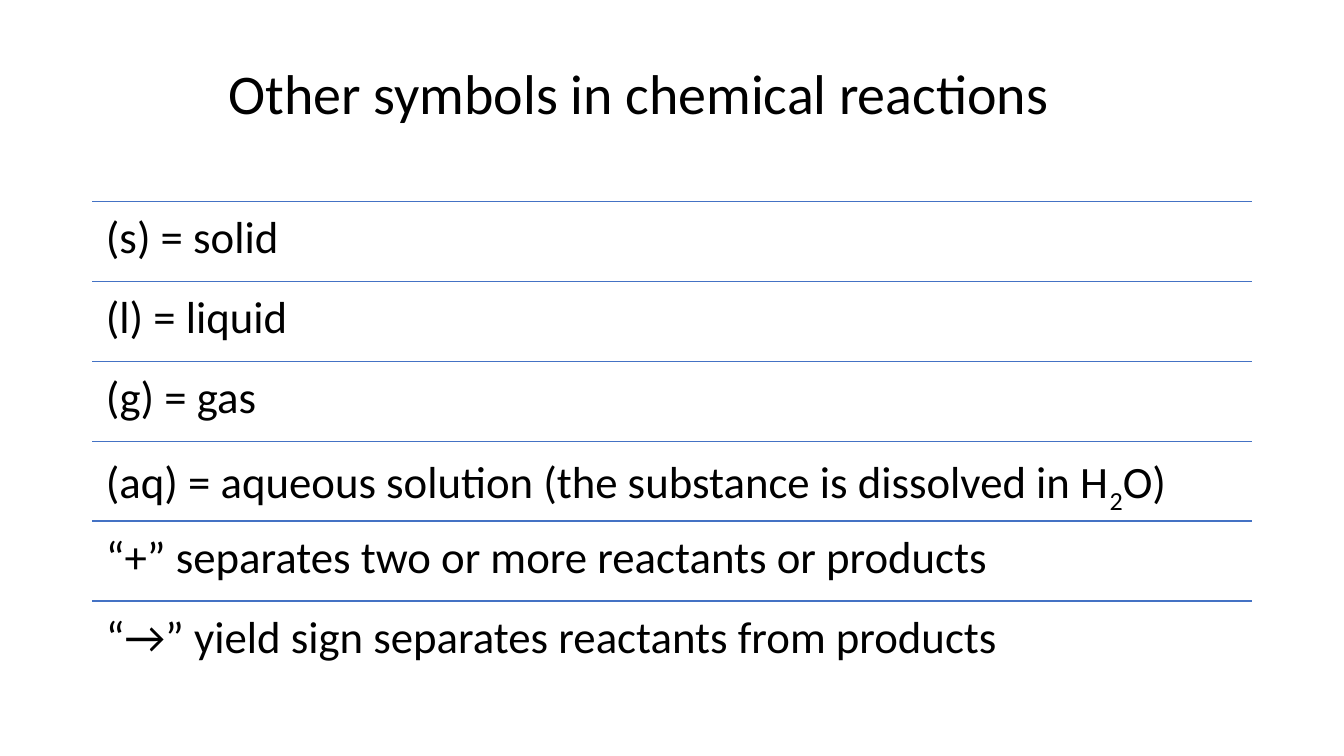
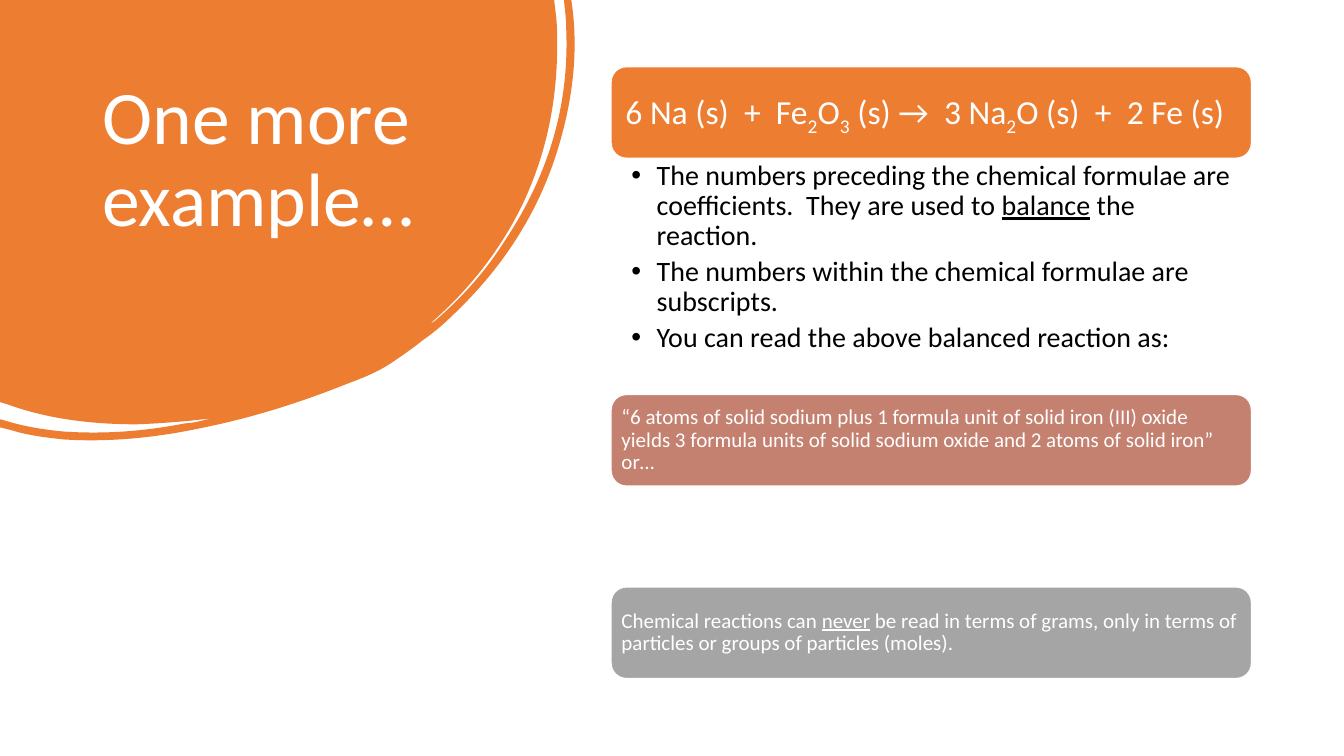
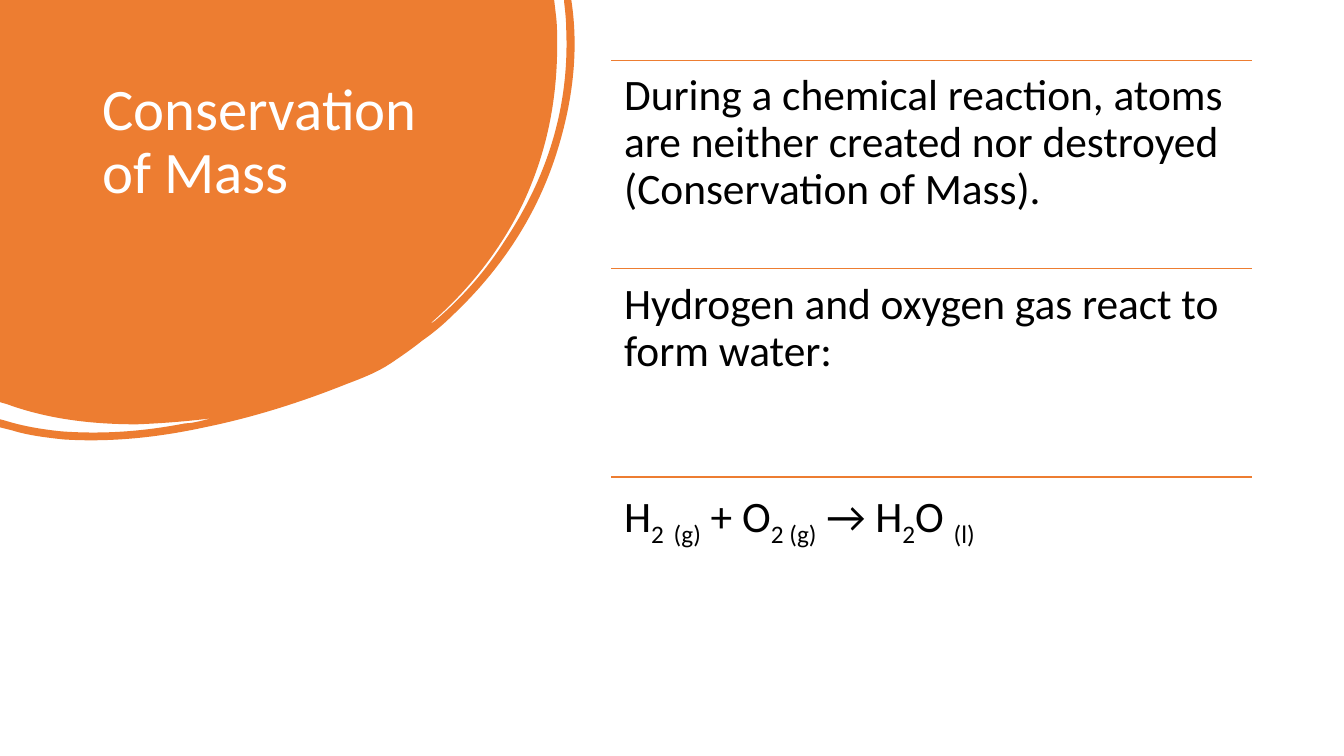
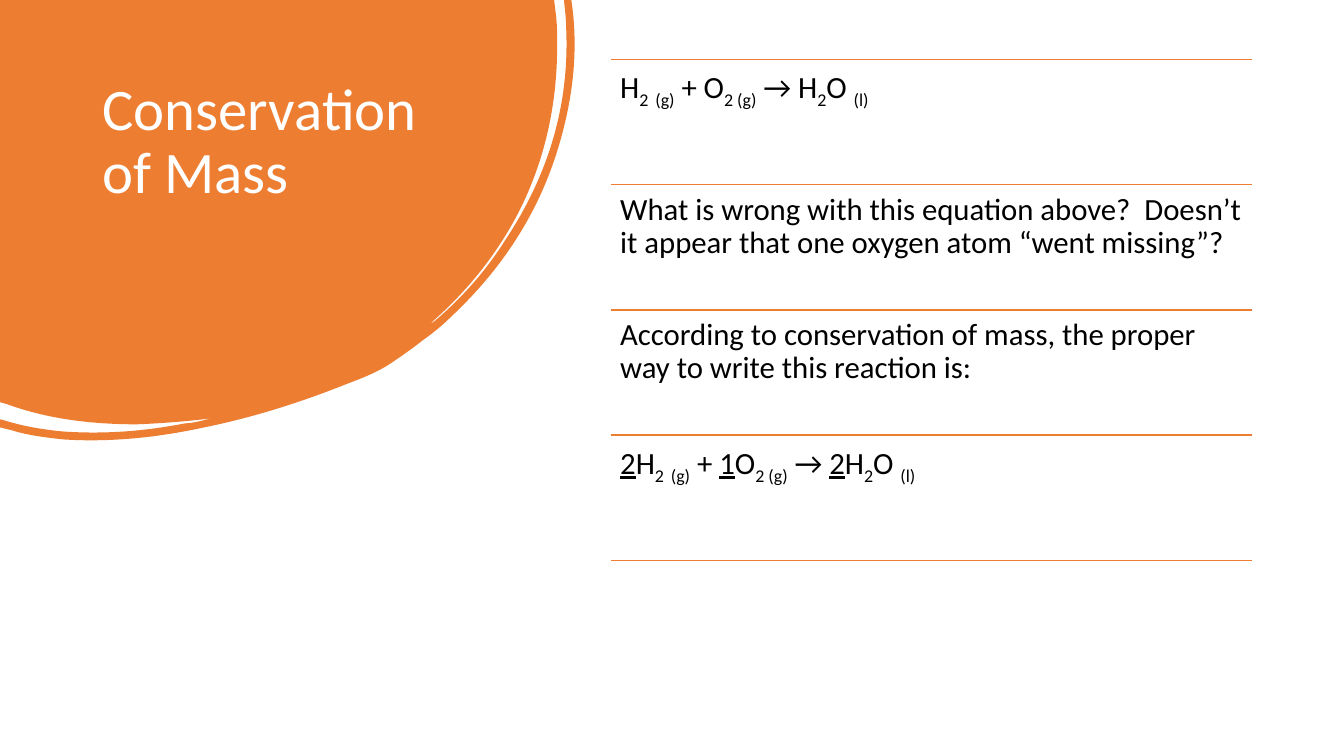
from collections import namedtuple

from lxml import etree
from pptx import Presentation
from pptx import util as u
from pptx.dml.color import RGBColor
from pptx.enum import shapes, text
from pptx.oxml import ns

Box = namedtuple("Box", "left top width height")

FONT = "Calibri"
ORANGE, CLAY, GREY, BLUE = "ED7D31", "C48170", "A5A5A5", "4472C4"
BLACK, WHITE = "000000", "FFFFFF"

SWOOSH_BOX = Box(0, 0, 14.5, 11.1)
SIDE_TITLE_BOX = Box(2.33, 1.87, 8.94, 5.64)
COLUMN_LEFT, COLUMN_WIDTH = 15.4, 16.14

SWOOSH_GRID = (5.71, 4.37)
SWOOSH_OUTLINE = [
    (0, 0), (5.5, 0), (5.52, 0.17),
    (5.53, 0.26, 5.53, 0.36, 5.53, 0.45),
    (5.53, 1.01, 5.42, 1.54, 5.18, 2.04),
    (4.96, 2.49, 4.65, 2.88, 4.27, 3.21),
    (4.29, 3.21, 4.3, 3.19, 4.32, 3.18),
    (4.59, 2.95, 4.82, 2.69, 5.01, 2.39),
    (5.43, 1.76, 5.65, 1.07, 5.62, 0.3),
    (5.62, 0.21, 5.61, 0.12, 5.6, 0.03),
    (5.6, 0), (5.67, 0), (5.68, 0.07),
    (5.74, 0.54, 5.68, 1.02, 5.53, 1.5),
    (5.33, 2.14, 4.97, 2.68, 4.48, 3.14),
    (4.39, 3.23, 4.29, 3.31, 4.19, 3.38),
    (4.09, 3.46, 3.99, 3.53, 3.87, 3.61),
    (3.75, 3.69, 3.6, 3.75, 3.44, 3.81),
    (2.99, 3.99, 2.52, 4.14, 2.03, 4.24),
    (1.57, 4.34, 1.1, 4.39, 0.63, 4.36),
    (0.45, 4.34, 0.28, 4.32, 0.12, 4.27),
    (0, 4.24), (0, 4.16), (0.04, 4.17),
    (0.23, 4.23, 0.42, 4.26, 0.61, 4.28),
    (1.03, 4.31, 1.43, 4.28, 1.84, 4.2),
    (1.89, 4.2, 1.93, 4.19, 1.98, 4.18),
    (2.02, 4.17, 2.06, 4.16, 2.1, 4.15),
    (1.86, 4.18, 1.61, 4.2, 1.36, 4.21),
    (0.92, 4.21, 0.48, 4.16, 0.07, 4.01),
    (0, 3.99),
]

WATER = "H~2~ ~(g)~ + O~2 (g)~ → H~2~O ~(l)~"
BALANCED_WATER = "*2*H~2~ ~(g)~ + *1*O~2 (g)~ → *2*H~2~O ~(l)~"
SYMBOLS = [
    "(s) = solid",
    "(l) = liquid",
    "(g) = gas",
    "(aq) = aqueous solution (the substance is dissolved in H~2~O)",
    "“+” separates two or more reactants or products",
    "“→” yield sign separates reactants from products",
]
REACTION = "6 Na (s)  +  Fe~2~O~3~ (s) →  3 Na~2~O (s)  +  2 Fe (s)"
READING_NOTES = [
    "The numbers preceding the chemical formulae are coefficients.  "
    "They are used to *balance* the reaction.",
    "The numbers within the chemical formulae are subscripts.",
    "You can read the above balanced reaction as:",
]
READING = (
    "“6 atoms of solid sodium plus 1 formula unit of solid iron (III) oxide "
    "yields 3 formula units of solid sodium oxide and 2 atoms of solid iron” or…"
)
WARNING = (
    "Chemical reactions can *never* be read in terms of grams, "
    "only in terms of particles or groups of particles (moles)."
)
MASS_TITLE = "Conservation of Mass"
MASS_LAW = [
    "During a chemical reaction, atoms are neither created nor destroyed "
    "(Conservation of Mass).",
    "Hydrogen and oxygen gas react to form water:",
    WATER,
]
MASS_BALANCE = [
    WATER,
    "What is wrong with this equation above?  Doesn’t it appear that "
    "one oxygen atom “went missing”?",
    "According to conservation of mass, the proper way to write this reaction is:",
    BALANCED_WATER,
]


def rgb(value):
    """Turn a hex string into a colour."""
    return RGBColor.from_string(value)


def emu(box):
    """Turn a box in centimetres into lengths."""
    return [u.Cm(length) for length in box]


def add_runs(paragraph, marked):
    """Write text in which ~x~ is a subscript and *x* is underlined."""
    for i, part in enumerate(marked.split("~")):
        for j, piece in enumerate(part.split("*")):
            if not piece:
                continue
            run = paragraph.add_run()
            run.text = piece
            if i % 2:
                run.font._element.set("baseline", "-25000")
            if j % 2:
                run.font.underline = True


def add_bullet(paragraph):
    """Give a paragraph a hanging round bullet."""
    props = paragraph._p.get_or_add_pPr()
    props.set("marL", str(u.Cm(0.64)))
    props.set("indent", str(-u.Cm(0.64)))
    etree.SubElement(props, ns.qn("a:buFont")).set("typeface", "Arial")
    etree.SubElement(props, ns.qn("a:buChar")).set("char", "•")


def write(shape, lines, size, color, insets, middle=False, bulleted=False):
    """Fill a shape with left-aligned paragraphs."""
    frame = shape.text_frame
    frame.word_wrap = True
    frame.vertical_anchor = text.MSO_ANCHOR.MIDDLE if middle else text.MSO_ANCHOR.TOP
    (frame.margin_left, frame.margin_top,
     frame.margin_right, frame.margin_bottom) = emu(insets)
    for index, line in enumerate(lines):
        paragraph = frame.paragraphs[0] if index == 0 else frame.add_paragraph()
        paragraph.alignment = text.PP_ALIGN.LEFT
        paragraph.line_spacing = 0.9
        if bulleted:
            paragraph.space_after = u.Pt(size * 0.2)
            add_bullet(paragraph)
        paragraph.font.name = FONT
        paragraph.font.size = u.Pt(size)
        paragraph.font.color.rgb = rgb(color)
        add_runs(paragraph, line)


def add_text(slide, box, lines, size, color=BLACK,
             insets=(0.25, 0.13, 0.25, 0.13), **style):
    """Place a text box."""
    write(slide.shapes.add_textbox(*emu(box)), lines, size, color, insets, **style)


def add_rule(slide, left, top, width, color):
    """Draw a thin horizontal line."""
    rule = slide.shapes.add_connector(
        shapes.MSO_CONNECTOR.STRAIGHT, *emu((left, top, left + width, top)))
    rule.line.color.rgb = rgb(color)
    rule.line.width = u.Pt(1)
    etree.SubElement(rule._element.spPr, ns.qn("a:effectLst"))


def add_ruled_rows(slide, box, rows, size, color, inset, closed=False):
    """Share a box among equal rows, each under a line."""
    pitch = box.height / len(rows)
    for index, row in enumerate(rows):
        top = box.top + index * pitch
        add_rule(slide, box.left, top, box.width, color)
        add_text(slide, Box(box.left, top, box.width, pitch), [row], size,
                 insets=[inset] * 4)
    if closed:
        add_rule(slide, box.left, box.top + box.height, box.width, color)


def add_card(slide, box, line, size, fill, inset):
    """Place a rounded card with white text."""
    card = slide.shapes.add_shape(shapes.MSO_SHAPE.ROUNDED_RECTANGLE, *emu(box))
    card.shadow.inherit = False
    card.fill.solid()
    card.fill.fore_color.rgb = rgb(fill)
    card.line.color.rgb = rgb(WHITE)
    card.line.width = u.Pt(1)
    write(card, [line], size, WHITE, [inset] * 4, middle=True)


def bend(segment, points):
    """Turn a straight path segment into a Bézier curve through its points."""
    curve = etree.Element(ns.qn("a:cubicBezTo"))
    for x, y in points:
        node = etree.SubElement(curve, ns.qn("a:pt"))
        node.set("x", str(x))
        node.set("y", str(y))
    segment.getparent().replace(segment, curve)


def add_swoosh(slide, box):
    """Draw the orange brush shape in the corner."""
    across, down = box.width / SWOOSH_GRID[0], box.height / SWOOSH_GRID[1]
    parts = [[(u.Cm(x * across), u.Cm(y * down))
              for x, y in zip(part[::2], part[1::2])] for part in SWOOSH_OUTLINE]
    ends = [part[-1] for part in parts]
    builder = slide.shapes.build_freeform(*ends[0])
    builder.add_line_segments(ends[1:], close=True)
    swoosh = builder.convert_to_shape()
    swoosh.left, swoosh.top, swoosh.width, swoosh.height = emu(box)
    outline = next(swoosh._element.iter(ns.qn("a:path")))
    outline.set("w", str(swoosh.width))
    outline.set("h", str(swoosh.height))
    for segment, points in zip(outline.findall(ns.qn("a:lnTo")), parts[1:]):
        if len(points) == 3:
            bend(segment, points)
    swoosh.shadow.inherit = False
    swoosh.fill.solid()
    swoosh.fill.fore_color.rgb = rgb(ORANGE)
    swoosh.line.fill.background()


def new_slide(deck):
    """Add a blank slide."""
    return deck.slides.add_slide(deck.slide_layouts[6])


def new_swoosh_slide(deck, title, size):
    """Add a slide with its title on the brush shape."""
    slide = new_slide(deck)
    add_swoosh(slide, SWOOSH_BOX)
    add_text(slide, SIDE_TITLE_BOX, [title], size, WHITE)
    return slide


def add_symbols_slide(deck):
    """Add the list of symbols."""
    slide = new_slide(deck)
    add_text(slide, Box(5.51, 0.84, 22.86, 3.18),
             ["Other symbols in chemical reactions"], 40, middle=True)
    add_ruled_rows(slide, Box(2.33, 5.08, 29.21, 12.08), SYMBOLS, 32, BLUE, 0.34)


def add_example_slide(deck):
    """Add the worked example with its cards."""
    slide = new_swoosh_slide(deck, "One more example…", 54)
    add_text(slide, Box(COLUMN_LEFT, 3.99, COLUMN_WIDTH, 8.38), READING_NOTES, 20,
             insets=(0.51, 0.07, 0.41, 0.07), bulleted=True)
    for top, line, size, fill, inset in [
        (1.68, REACTION, 24, ORANGE, 0.25),
        (9.94, READING, 15, CLAY, 0.15),
        (14.79, WARNING, 15, GREY, 0.15),
    ]:
        add_card(slide, Box(COLUMN_LEFT, top, COLUMN_WIDTH, 2.31),
                 line, size, fill, inset)


def add_mass_slide(deck, rows, top, height, size, inset, closed=False):
    """Add a slide on conservation of mass."""
    slide = new_swoosh_slide(deck, MASS_TITLE, 42)
    add_ruled_rows(slide, Box(COLUMN_LEFT, top, COLUMN_WIDTH, height),
                   rows, size, ORANGE, inset, closed)


def main():
    """Build and save the deck."""
    deck = Presentation()
    deck.slide_width, deck.slide_height = u.Cm(33.87), u.Cm(19.05)
    add_symbols_slide(deck)
    add_example_slide(deck)
    add_mass_slide(deck, MASS_LAW, 1.52, 15.75, 31, 0.33)
    add_mass_slide(deck, MASS_BALANCE, 1.5, 12.62, 22, 0.23, closed=True)
    deck.save("out.pptx")


if __name__ == "__main__":
    main()
